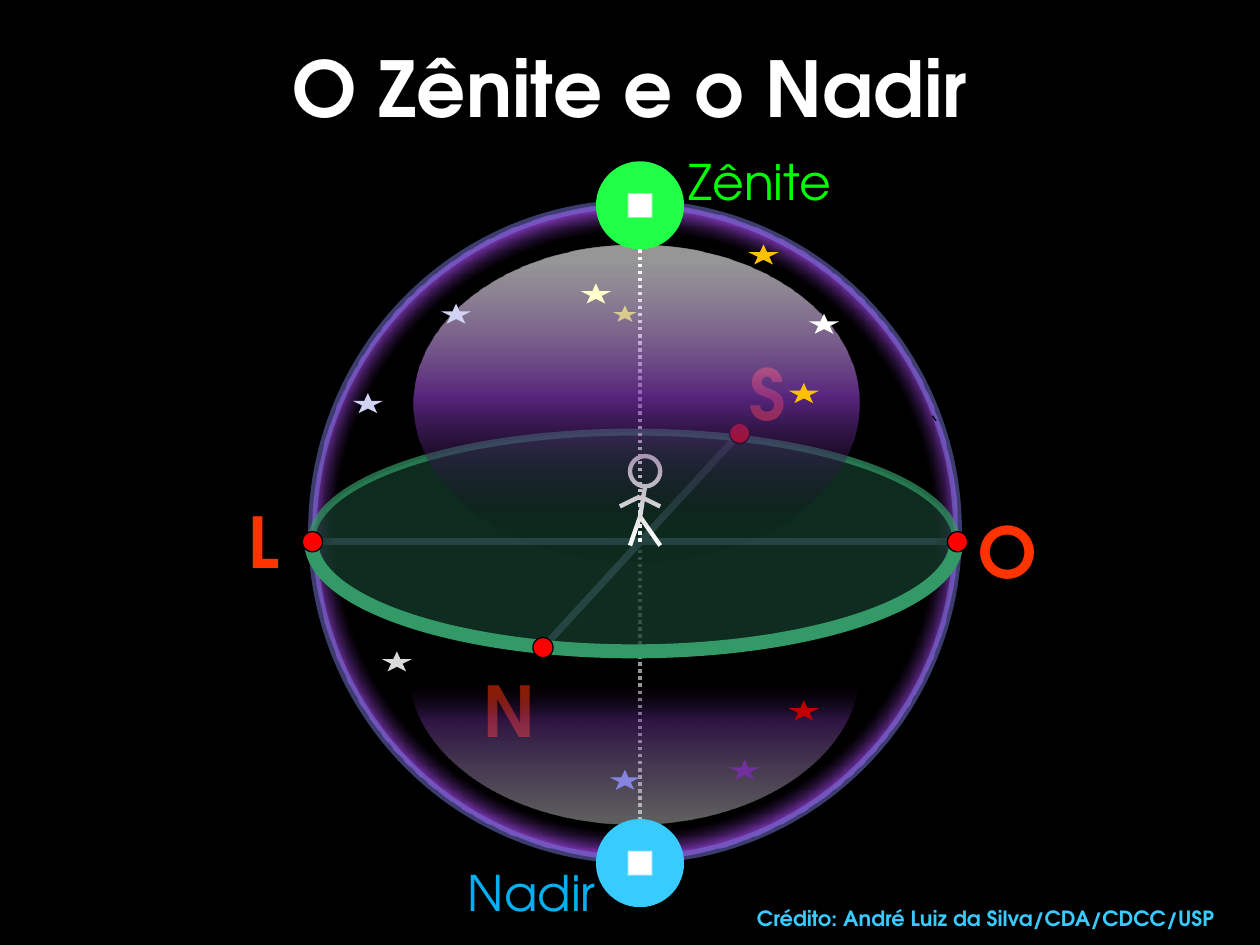
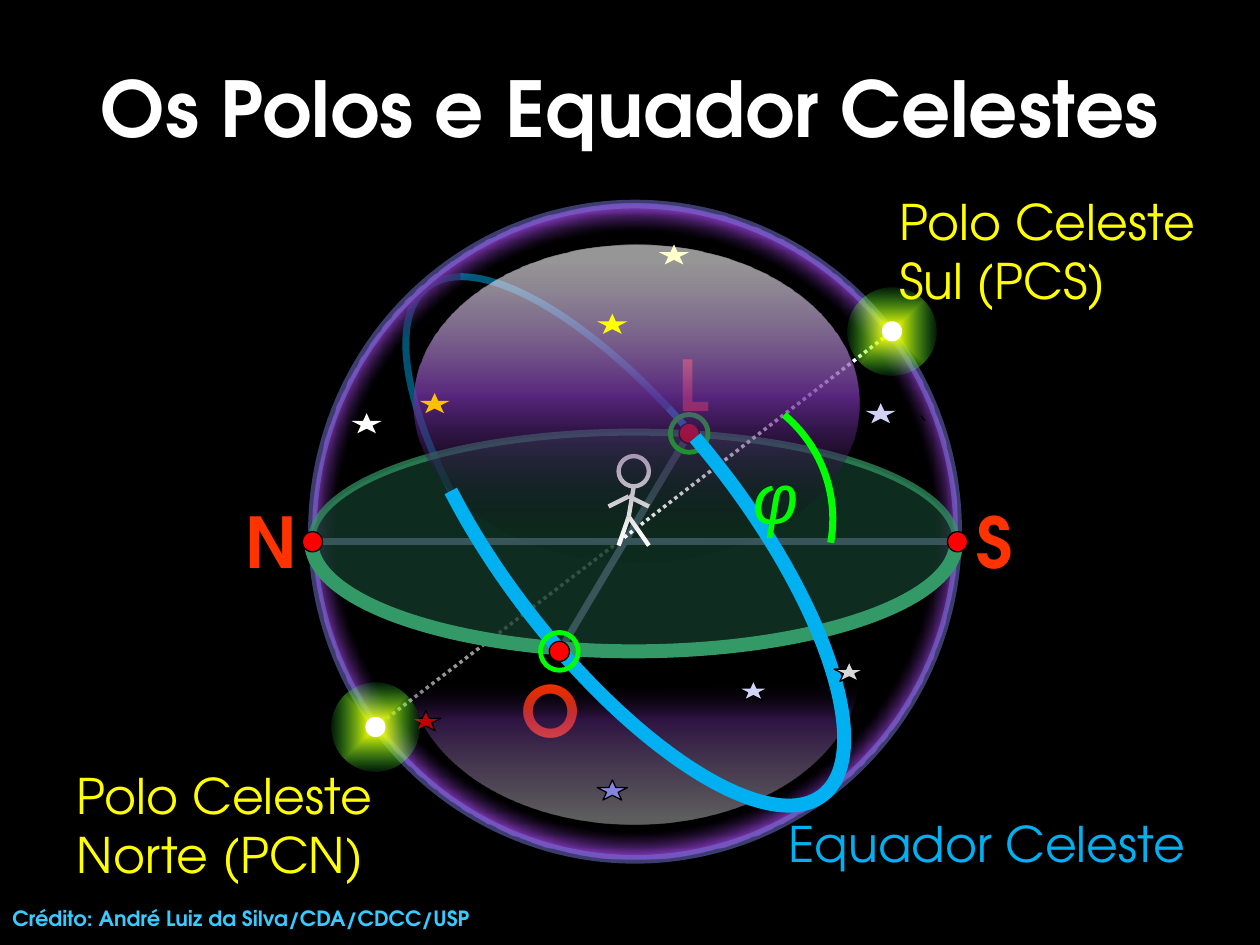
"""Build two slides on the celestial sphere: zenith and nadir, then poles and equator."""
from dataclasses import dataclass
from itertools import pairwise

from lxml.etree import SubElement
from pptx import Presentation
from pptx.dml.color import RGBColor
from pptx.enum.dml import MSO_LINE
from pptx.enum.shapes import MSO_CONNECTOR, MSO_SHAPE
from pptx.enum.text import MSO_ANCHOR, MSO_AUTO_SIZE, PP_ALIGN
from pptx.oxml.ns import qn
from pptx.util import Pt

PX = 9144
LINE, OVAL, ARC, STAR = "line", MSO_SHAPE.OVAL, MSO_SHAPE.ARC, MSO_SHAPE.STAR_5_POINT


@dataclass(frozen=True)
class Theme:
    font: str = "TeX Gyre Adventor"
    symbol_font: str = "Arial"
    title: int = 44
    label: int = 40
    caption: int = 28
    credit: int = 12
    black: str = "000000"
    white: str = "FFFFFF"
    red: str = "FF0000"
    orange: str = "FF3300"
    yellow: str = "FFFF00"
    lime: str = "00FF00"
    sky: str = "00B0F0"
    nadir: str = "37CBFF"
    zenith: str = "21FF46"
    purple: str = "7030A0"
    rim: str = "7878DE"
    axis: str = "A5A5E9"
    horizon: str = "339966"
    ground: str = "143C2B"
    cream: str = "FFFFCC"
    gold: str = "FFC000"
    lilac: str = "D2D2F4"
    crimson: str = "C00000"
    violet: str = "8585E0"
    silver: str = "D9D9D9"


theme = Theme()


def write(page, text, at, size=theme.caption, colour=theme.white, bold=False, italic=False,
          font=theme.font, align=PP_ALIGN.LEFT, anchor=MSO_ANCHOR.TOP, turn=0, box=None):
    lengths = [value * PX for value in at]
    if box is None:
        box = page.shapes.add_textbox(*lengths)
    box.left, box.top, box.width, box.height = lengths
    box.rotation = turn
    frame = box.text_frame
    frame.word_wrap, frame.auto_size, frame.vertical_anchor = True, MSO_AUTO_SIZE.NONE, anchor
    para = frame.paragraphs[0]
    para.alignment = align
    span = para.add_run()
    span.text = text
    span.font.name, span.font.size = font, Pt(size)
    span.font.bold, span.font.italic = bold, italic
    span.font.color.rgb = RGBColor.from_string(colour)


def draw(page, kind, at, radius=None, fill=None, fill_alpha=None, line=None, width=0.75,
         line_alpha=None, dash=None, turn=0, arc=(), stops=(), centre=None, angle=0):
    if radius:
        at = (at[0] - radius, at[1] - radius, 2 * radius, 2 * radius)
    lengths = [value * PX for value in at]
    if kind == LINE:
        item = page.shapes.add_connector(MSO_CONNECTOR.STRAIGHT, *lengths)
    else:
        item = page.shapes.add_shape(kind, *lengths)
        item.shadow.inherit = False
        item.rotation = turn
        for index, degrees in enumerate(arc):
            item.adjustments[index] = degrees * 0.6
        if fill:
            item.fill.solid()
            item.fill.fore_color.rgb = RGBColor.from_string(fill)
        else:
            item.fill.background()
    properties = item.element.spPr
    if line:
        item.line.color.rgb = RGBColor.from_string(line)
        item.line.width = Pt(width)
        item.line.dash_style = dash
    else:
        item.line.fill.background()
    for holder, alpha in (("a:solidFill", fill_alpha), ("a:ln", line_alpha)):
        if alpha:
            colour = next(properties.find(qn(holder)).iter(qn("a:srgbClr")))
            SubElement(colour, qn("a:alpha")).set("val", f"{alpha}%")
            colour[-1].set("val", str(alpha * 1000))
    if kind == LINE:
        SubElement(properties, qn("a:effectLst"))
    if stops:
        gradient = SubElement(properties, qn("a:gradFill"))
        properties.replace(properties.find(qn("a:noFill")), gradient)
        gradient.set("rotWithShape", "1")
        stop_list = SubElement(gradient, qn("a:gsLst"))
        for position, tone, alpha in stops:
            stop = SubElement(stop_list, qn("a:gs"))
            stop.set("pos", str(position * 1000))
            colour = SubElement(stop, qn("a:srgbClr"))
            colour.set("val", tone)
            SubElement(colour, qn("a:alpha")).set("val", str(alpha * 1000))
        if centre:
            radial = SubElement(gradient, qn("a:path"))
            radial.set("path", centre)
            target = SubElement(radial, qn("a:fillToRect"))
            for side in "ltrb":
                target.set(side, "50000")
        else:
            SubElement(gradient, qn("a:lin")).set("ang", str(angle * 60000))


middle = PP_ALIGN.CENTER
dotted = dict(line=theme.white, width=2, dash=MSO_LINE.ROUND_DOT)
point = dict(radius=8, fill=theme.red, line=theme.black)
ring = dict(radius=15, line=theme.lime, width=2.75)
body = dict(line=theme.white, width=2.5)
label = dict(size=theme.label, colour=theme.orange, bold=True)
zenith_glow, nadir_glow = [
    [(18, theme.white, 100), (21, tone, 100), (80, tone, 2)]
    for tone in (theme.zenith, theme.nadir)]
pole_glow = [(7, theme.yellow, 100), (77, theme.zenith, 2)]

sphere = (248, 162, 512, 520)
floor = (247, 343, 512, 174)
cap = (328, 194, 354, 252)
bowl = (442, 414, 123, 358)
equator = (401, 174, 190, 511)
west, east = (248, 430), (760, 430)
back_left, back_right, low_right = [
    dict(turn=142.1, line=theme.sky, width=4, line_alpha=alpha, arc=span)
    for span, alpha in zip(pairwise((54, 96, 146, 163)), (80, 50, 80))]
front_equator = dict(turn=142.1, line=theme.sky, width=8, arc=(162, 54))

scenes = [
    dict(
        title="O Zênite e o Nadir", title_top=6, credit_left=591, tilted=False,
        layers=("axes", "label", "sphere"), origin=508, observer=508,
        back=(587, 344), front=(431, 514), poles=[(508, 163), (508, 685)],
        glows=[zenith_glow, nadir_glow],
        labels=[("N", 374, 525), ("L", 187, 391), ("S", 585, 273), ("O", 767, 399)],
        outlined_stars=[(484, 241, theme.yellow)],
        stars=[(280, 312, theme.lilac), (350, 241, theme.lilac), (626, 304, theme.gold),
               (594, 194, theme.gold), (642, 249, theme.white), (461, 225, theme.cream),
               (579, 603, theme.purple), (626, 556, theme.crimson),
               (484, 611, theme.violet), (303, 517, theme.silver)],
        captions=[("Zênite", 517, 115, 172, dict(colour=theme.lime, align=middle)),
                  ("Nadir", 336, 680, 172, dict(colour=theme.sky, align=middle))]),
    dict(
        title="Os Polos e Equador Celestes", title_top=22, credit_left=0, tilted=True,
        layers=("sphere", "axes", "label"), origin=491, observer=499,
        back=(547, 344), front=(444, 517), poles=[(708, 263), (298, 577)],
        glows=[pole_glow, pole_glow],
        labels=[("O", 404, 525), ("N", 185, 391), ("L", 529, 266), ("S", 765, 391)],
        outlined_stars=[(586, 540, theme.lilac), (326, 564, theme.crimson),
                        (474, 619, theme.violet), (662, 525, theme.silver)],
        stars=[(687, 320, theme.lilac), (333, 312, theme.gold), (279, 328, theme.white),
               (474, 249, theme.yellow), (523, 194, theme.cream)],
        captions=[("Polo Celeste Sul (PCS)", 704, 147, 268, dict(colour=theme.yellow)),
                  ("Polo Celeste Norte (PCN)", 51, 603, 260, dict(colour=theme.yellow)),
                  ("Equador Celeste", 594, 641, 378, dict(colour=theme.sky, align=middle)),
                  ("φ", 564, 355, 102,
                   dict(size=theme.label, colour=theme.lime, italic=True, turn=358.6,
                        font=theme.symbol_font, align=middle))]),
]

deck = Presentation()
deck.slide_width, deck.slide_height = 1000 * PX, 750 * PX
backdrop = deck.slide_master.background.fill
backdrop.solid()
backdrop.fore_color.rgb = RGBColor.from_string(theme.black)

for scene in scenes:
    page = deck.slides.add_slide(deck.slide_layouts[5])
    write(page, scene["title"], (0, scene["title_top"], 1000, 125), size=theme.title, bold=True,
          align=middle, anchor=MSO_ANCHOR.MIDDLE, box=page.shapes.title)
    tilted, back, front = scene["tilted"], scene["back"], scene["front"]
    origin = (scene["origin"], 430)
    upper_pole, lower_pole = scene["poles"]
    hidden_label, *open_labels = scene["labels"]

    if tilted:
        draw(page, ARC, equator, **back_left)
    draw(page, LINE, lower_pole + origin, **dotted)
    for layer in scene["layers"]:
        if layer == "sphere":
            draw(page, OVAL, sphere, line=theme.rim, width=5, line_alpha=50, centre="circle",
                 stops=[(65, theme.black, 40), (70, theme.purple, 100)])
        elif layer == "axes":
            for start, end in ((front, back), (west, east)):
                draw(page, LINE, start + end, line=theme.axis, width=4)
        else:
            letter, left, top = hidden_label
            write(page, letter, (left, top, 39, 77), **label)
    for letter, left, top in open_labels:
        write(page, letter, (left, top, 39, 77), **label)

    draw(page, OVAL, floor, fill=theme.ground, fill_alpha=73,
         line=theme.horizon, width=4, line_alpha=70)
    draw(page, MSO_SHAPE.MOON, bowl, turn=270, stops=[
        (3, theme.white, 37), (68, theme.purple, 41), (94, theme.black, 0)])
    page.shapes[-1].adjustments[0] = 0.875
    draw(page, ARC, floor, fill=theme.ground, fill_alpha=7, line=theme.horizon, width=8,
         arc=(359, 181))
    tick_left = scene["observer"] + 232
    draw(page, LINE, (tick_left, 330, tick_left + 3, 334), line=theme.black)
    draw(page, LINE, origin + upper_pole, **dotted)
    if tilted:
        draw(page, ARC, equator, **back_right)
        draw(page, ARC, equator, **low_right)
        draw(page, OVAL, back, **ring)
    else:
        for left, top, colour in scene["outlined_stars"]:
            draw(page, STAR, (left, top, 24, 16), fill=colour, line=theme.black)

    body_left = scene["observer"]
    draw(page, OVAL, (body_left + 4, 374), radius=12, **body)
    for joint, reach, end in ((394, -16, 402), (394, 16, 402), (410, 4, 386),
                              (410, -8, 433), (410, 16, 433)):
        draw(page, LINE, (body_left, joint, body_left + reach, end), **body)

    for spot in (west, east, back):
        draw(page, OVAL, spot, **point)
    draw(page, OVAL, cap, angle=90, stops=[
        (6, theme.white, 58), (48, theme.purple, 77), (91, theme.black, 2)])
    if tilted:
        draw(page, ARC, equator, **front_equator)
        draw(page, OVAL, front, **ring)
        draw(page, ARC, (553, 412), radius=108, line=theme.lime, width=4, arc=(310, 10))
        for left, top, colour in scene["outlined_stars"]:
            draw(page, STAR, (left, top, 24, 16), fill=colour, line=theme.black)
    draw(page, OVAL, front, **point)
    for left, top, colour in scene["stars"]:
        draw(page, STAR, (left, top, 24, 16), fill=colour)

    write(page, "Crédito: André Luiz da Silva/CDA/CDCC/USP", (scene["credit_left"], 714, 406, 30),
          size=theme.credit, colour=theme.nadir, bold=True)
    for pole, stops in zip(scene["poles"], scene["glows"]):
        draw(page, OVAL, pole, radius=35, turn=305.7, centre="shape", stops=stops)
        if tilted:
            draw(page, OVAL, pole, radius=8, fill=theme.white)
    for text, left, top, width, style in scene["captions"]:
        write(page, text, (left, top, width, 57), **style)

deck.save("out.pptx")
